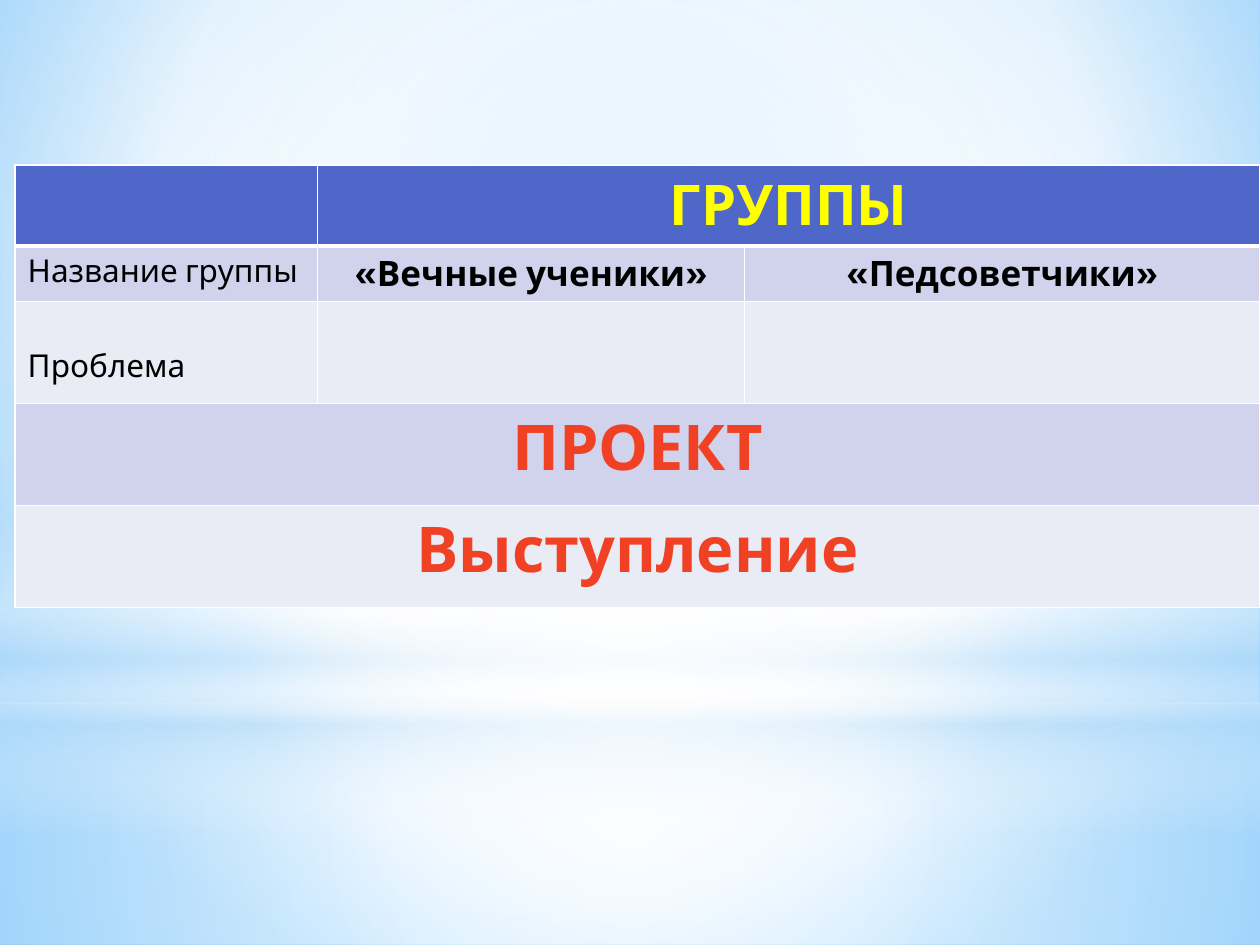
"""Build the slide with the table of groups over a soft blue backdrop."""
from lxml import etree
from pptx import Presentation
from pptx import util as u
from pptx.dml.color import RGBColor
from pptx.enum import shapes, text
from pptx.oxml import ns

WIDTH, HEIGHT = 10, 7.5
FONT = "Cabin"
BLUE, LILAC, PALE = (RGBColor.from_string(c) for c in ("4E67C8", "D0D3EB", "E9EBF5"))
YELLOW, BLACK, RED, WHITE = (RGBColor.from_string(c) for c in ("FFFF00", "000000", "F14124", "FFFFFF"))
SKY, BRIGHT, MIST = (RGBColor.from_string(c) for c in ("9ED5FF", "5BB9FF", "B4DCFA"))

CENTRE = (50, 50, 50, 50)
BACKDROP = [(0, SKY, 100), (60, WHITE, 100), (100, BRIGHT, 100)]
RECT, OVAL = shapes.MSO_SHAPE.RECTANGLE, shapes.MSO_SHAPE.OVAL
GLOWS = [
    (RECT, 5.58, 1.92, [(0, WHITE, 91), (37, WHITE, 76), (100, MIST, 79)], CENTRE),
    (RECT, 0, 5.58, [(0, WHITE, 89), (48, WHITE, 62), (100, MIST, 79)], CENTRE),
    (RECT, 4.12, 2.5, [(0, WHITE, 0), (29, WHITE, 30), (45, MIST, 40),
                       (55, WHITE, 26), (65, MIST, 60), (100, WHITE, 0)], None),
    (OVAL, 1.75, 5.58, [(0, WHITE, 100), (56, WHITE, 0)], CENTRE),
]

COLS = [2.4, 3.39, 4.09]
ROWS = [0.41, 0.41, 0.81, 0.81, 0.81]
ROW_FILLS = [BLUE, LILAC, PALE, LILAC, PALE]
MERGES = [(0, 1, 2), (3, 0, 2), (4, 0, 2)]
CELLS = {
    (0, 1): ("ГРУППЫ", 32, YELLOW, True),
    (1, 0): ("Название группы", 18, BLACK, False),
    (1, 1): ("«Вечные ученики»", 20, BLACK, True),
    (1, 2): ("«Педсоветчики»", 20, BLACK, True),
    (2, 0): ("Проблема", 18, BLACK, False),
    (3, 0): ("ПРОЕКТ", 36, RED, True),
    (4, 0): ("Выступление", 36, RED, True),
}


def add(parent, tag, **attrs):
    el = etree.SubElement(parent, ns.qn(tag))
    for name, value in attrs.items():
        el.set(name, str(value))
    return el


def set_gradient(fill, holder, stops, focus):
    fill.solid()
    solid = holder.find(ns.qn("a:solidFill"))
    grad = etree.Element(ns.qn("a:gradFill"), rotWithShape="1")
    stop_list = add(grad, "a:gsLst")
    for pos, color, alpha in stops:
        clr = add(add(stop_list, "a:gs", pos=pos * 1000), "a:srgbClr", val=color)
        if alpha < 100:
            add(clr, "a:alpha", val=alpha * 1000)
    if focus:
        edges = {side: edge * 1000 for side, edge in zip("ltrb", focus)}
        add(add(grad, "a:path", path="circle"), "a:fillToRect", **edges)
    else:
        add(grad, "a:lin", ang=90 * 60000, scaled=0)
    holder.replace(solid, grad)


def set_borders(cell, row):
    tc_pr = cell._tc.get_or_add_tcPr()
    heavy = {(0, "B"), (1, "T")}
    for i, side in enumerate("LRTB"):
        width = 3 if (row, side) in heavy else 1
        ln = add(tc_pr, f"a:ln{side}", w=u.Pt(width))
        add(add(ln, "a:solidFill"), "a:srgbClr", val=WHITE)
        tc_pr.insert(i, ln)


def write(cell, words, size, color, bold, centred):
    tf = cell.text_frame
    tf.text = words
    p = tf.paragraphs[0]
    p.alignment = text.PP_ALIGN.CENTER if centred else text.PP_ALIGN.LEFT
    r = p.runs[0]
    r.font.name, r.font.size, r.font.bold = FONT, u.Pt(size), bold
    r.font.color.rgb = color


def add_groups_table(s):
    frame = s.shapes.add_table(len(ROWS), len(COLS), u.Inches(0.12), u.Inches(1.31),
                               u.Inches(sum(COLS)), u.Inches(sum(ROWS)))
    table = frame.table
    table.first_row = table.horz_banding = False
    for col, width in zip(table.columns, COLS):
        col.width = u.Inches(width)
    for r, height in enumerate(ROWS):
        table.rows[r].height = u.Inches(height)
        for c in range(len(COLS)):
            cell = table.cell(r, c)
            cell.fill.solid()
            cell.fill.fore_color.rgb = ROW_FILLS[r]
            set_borders(cell, r)
    for r, first, last in MERGES:
        table.cell(r, first).merge(table.cell(r, last))
    for (r, c), content in CELLS.items():
        write(table.cell(r, c), *content, centred=content[-1])
    table.cell(2, 0).margin_top = u.Inches(0.36)


def main():
    prs = Presentation()
    prs.slide_width, prs.slide_height = u.Inches(WIDTH), u.Inches(HEIGHT)
    s = prs.slides.add_slide(prs.slide_layouts[6])
    bg_fill = s.background.fill
    bg_fill.solid()
    set_gradient(bg_fill, s.element.find(".//" + ns.qn("p:bgPr")), BACKDROP, (20, 10, 20, 60))
    for kind, top, height, stops, focus in GLOWS:
        sp = s.shapes.add_shape(kind, 0, u.Inches(top), prs.slide_width, u.Inches(height))
        sp.shadow.inherit = False
        sp.line.fill.background()
        set_gradient(sp.fill, sp.element.spPr, stops, focus)
    add_groups_table(s)
    prs.save("out.pptx")


if __name__ == "__main__":
    main()
